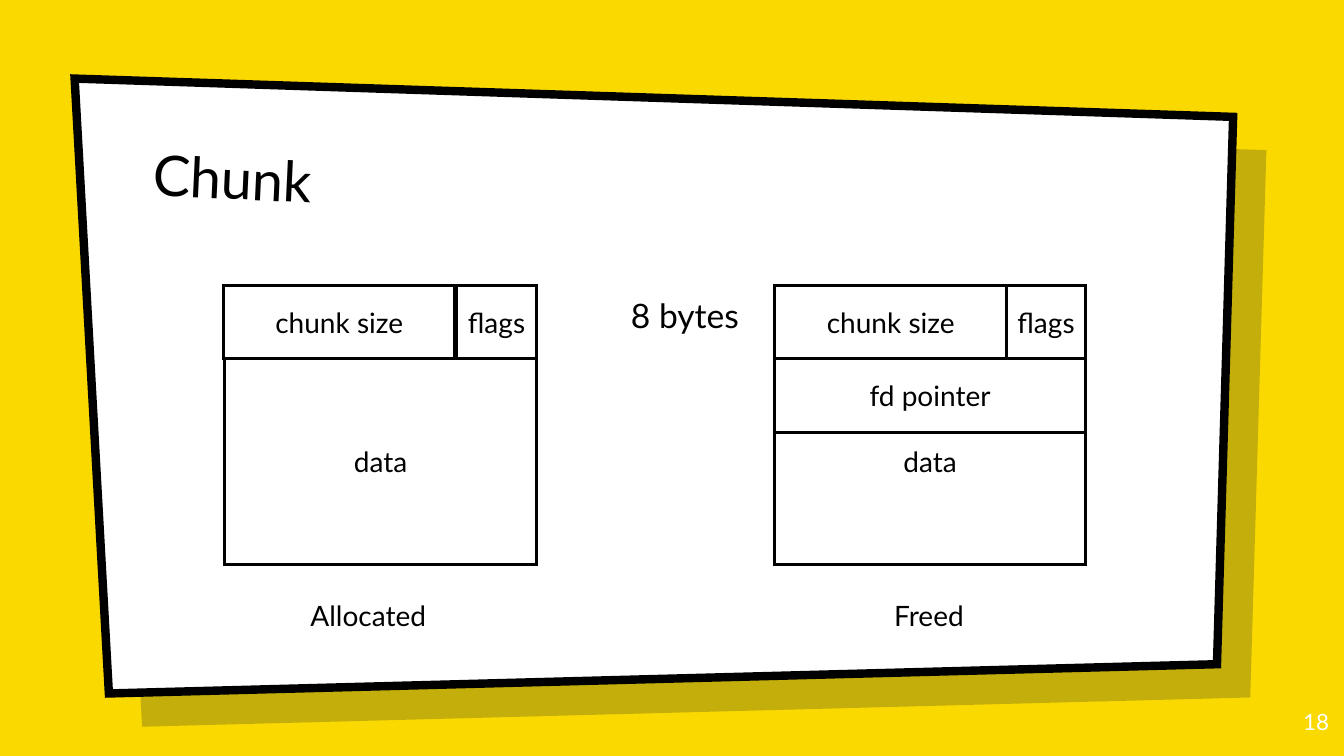
from dataclasses import dataclass

from lxml import etree
from pptx import Presentation
from pptx.dml.color import RGBColor
from pptx.enum.shapes import MSO_SHAPE
from pptx.enum.text import MSO_ANCHOR, PP_ALIGN
from pptx.oxml.ns import qn
from pptx.shapes.autoshape import Shape
from pptx.slide import Slide
from pptx.util import Inches, Pt

RECTANGLE = MSO_SHAPE.RECTANGLE
TOP, MIDDLE, BOTTOM = MSO_ANCHOR.TOP, MSO_ANCHOR.MIDDLE, MSO_ANCHOR.BOTTOM
LEFT, CENTER, RIGHT = PP_ALIGN.LEFT, PP_ALIGN.CENTER, PP_ALIGN.RIGHT
BLANK_LAYOUT = 6


@dataclass(frozen=True)
class Theme:
    font: str = "Lato"
    background: RGBColor = RGBColor(0xFA, 0xD9, 0x00)
    shade: RGBColor = RGBColor(0x00, 0x19, 0x36)
    ink: RGBColor = RGBColor(0x00, 0x00, 0x00)
    paper: RGBColor = RGBColor(0xFF, 0xFF, 0xFF)
    shade_opacity: int = 22
    title_size: int = 40
    body_size: int = 24
    label_size: int = 20
    number_size: int = 16
    panel_line: float = 6
    cell_line: float = 2


THEME = Theme()


@dataclass(frozen=True)
class Box:
    left: float
    top: float
    width: float
    height: float


@dataclass(frozen=True)
class Cell:
    text: str
    box: Box


@dataclass(frozen=True)
class Label:
    text: str
    box: Box
    size: int = THEME.label_size
    color: RGBColor = THEME.ink
    align: PP_ALIGN = LEFT
    anchor: MSO_ANCHOR = TOP
    inset: float = 0.1
    rotation: float = 0
    wrap: bool = True


PANEL_CORNERS = ((0.74, 0.78), (12.23, 1.16), (12.07, 6.59), (1.08, 6.88))
SHADE_OFFSET = 0.33

HEADER_TOP, ROW_HEIGHT = 2.83, 0.73
DATA_TOP, DATA_HEIGHT = HEADER_TOP + ROW_HEIGHT, 2.04
CHUNK_WIDTH, FLAGS_WIDTH = 3.09, 0.79
CAPTION_TOP, CAPTION_HEIGHT = 5.89, 0.44
ALLOCATED_LEFT, FREED_LEFT = 2.23, 7.68

LABELS = (
    Label("Chunk", Box(1.42, 1.28, 10.25, 1.11), THEME.title_size,
          anchor=BOTTOM, rotation=2.7),
    Label("8 bytes", Box(6.16, HEADER_TOP, 5.53, 3.63), THEME.body_size),
    Label("18", Box(12.48, 6.93, 0.8, 0.57), THEME.number_size,
          THEME.paper, RIGHT),
    Label("Allocated", Box(2.98, CAPTION_TOP, 1.38, CAPTION_HEIGHT),
          inset=0.05, wrap=False),
    Label("Freed", Box(8.77, CAPTION_TOP, 0.92, CAPTION_HEIGHT),
          inset=0.05, wrap=False),
)


def chunk_cells(left: float, size_left: float, size_width: float) -> list[Cell]:
    flags_left = left + CHUNK_WIDTH - FLAGS_WIDTH
    return [
        Cell("chunk size", Box(size_left, HEADER_TOP, size_width, ROW_HEIGHT)),
        Cell("data", Box(left, DATA_TOP, CHUNK_WIDTH, DATA_HEIGHT)),
        Cell("flags", Box(flags_left, HEADER_TOP, FLAGS_WIDTH, ROW_HEIGHT)),
    ]


CELLS = (
    *chunk_cells(ALLOCATED_LEFT, 2.22, 2.29),
    *chunk_cells(FREED_LEFT, FREED_LEFT, 2.31),
    Cell("fd pointer", Box(FREED_LEFT, DATA_TOP, CHUNK_WIDTH, ROW_HEIGHT)),
)


def lengths(box: Box) -> tuple[Inches, ...]:
    return tuple(Inches(value) for value in
                 (box.left, box.top, box.width, box.height))


def paint(shape: Shape, fill: RGBColor, line_width: float = 0) -> None:
    shape.shadow.inherit = False
    shape.fill.solid()
    shape.fill.fore_color.rgb = fill
    if line_width:
        shape.line.color.rgb = THEME.ink
        shape.line.width = Pt(line_width)
        miter = etree.SubElement(shape.line._get_or_add_ln(), qn("a:miter"))
        miter.set("lim", "800000")
    else:
        shape.line.fill.background()


def write(shape: Shape, text: str, size: int, color: RGBColor,
          align: PP_ALIGN, anchor: MSO_ANCHOR, side_inset: float,
          end_inset: float, wrap: bool = True) -> None:
    frame_format = {
        "word_wrap": wrap,
        "vertical_anchor": anchor,
        "margin_left": Inches(side_inset),
        "margin_right": Inches(side_inset),
        "margin_top": Inches(end_inset),
        "margin_bottom": Inches(end_inset),
    }
    for name, value in frame_format.items():
        setattr(shape.text_frame, name, value)
    paragraph = shape.text_frame.paragraphs[0]
    paragraph.text = text
    paragraph.alignment = align
    font_format = {"name": THEME.font, "size": Pt(size)}
    for name, value in font_format.items():
        setattr(paragraph.font, name, value)
    paragraph.font.color.rgb = color


def draw_panel(slide: Slide, offset: float) -> Shape:
    corners = [(Inches(x + offset), Inches(y + offset))
               for x, y in PANEL_CORNERS]
    builder = slide.shapes.build_freeform(*corners[0])
    builder.add_line_segments(corners[1:], close=True)
    return builder.convert_to_shape()


def draw_shade(slide: Slide) -> None:
    shape = draw_panel(slide, SHADE_OFFSET)
    paint(shape, THEME.shade)
    color = shape.fill._xPr.find(qn("a:solidFill"))[0]
    alpha = etree.SubElement(color, qn("a:alpha"))
    alpha.set("val", str(THEME.shade_opacity * 1000))


def draw_label(slide: Slide, label: Label) -> None:
    shape = slide.shapes.add_textbox(*lengths(label.box))
    shape.rotation = label.rotation
    side_inset = 0.1
    write(shape, label.text, label.size, label.color, label.align,
          label.anchor, side_inset, label.inset, label.wrap)


def draw_cell(slide: Slide, cell: Cell) -> None:
    shape = slide.shapes.add_shape(RECTANGLE, *lengths(cell.box))
    paint(shape, THEME.paper, THEME.cell_line)
    write(shape, cell.text, THEME.label_size, THEME.ink, CENTER, MIDDLE,
          0.1, 0.05)


def main() -> None:
    presentation = Presentation()
    presentation.slide_width = Inches(13.33)
    presentation.slide_height = Inches(7.5)
    slide = presentation.slides.add_slide(
        presentation.slide_layouts[BLANK_LAYOUT])
    slide.background.fill.solid()
    slide.background.fill.fore_color.rgb = THEME.background
    draw_shade(slide)
    paint(draw_panel(slide, 0), THEME.paper, THEME.panel_line)
    for label in LABELS:
        draw_label(slide, label)
    for cell in CELLS:
        draw_cell(slide, cell)
    presentation.save("out.pptx")


if __name__ == "__main__":
    main()
